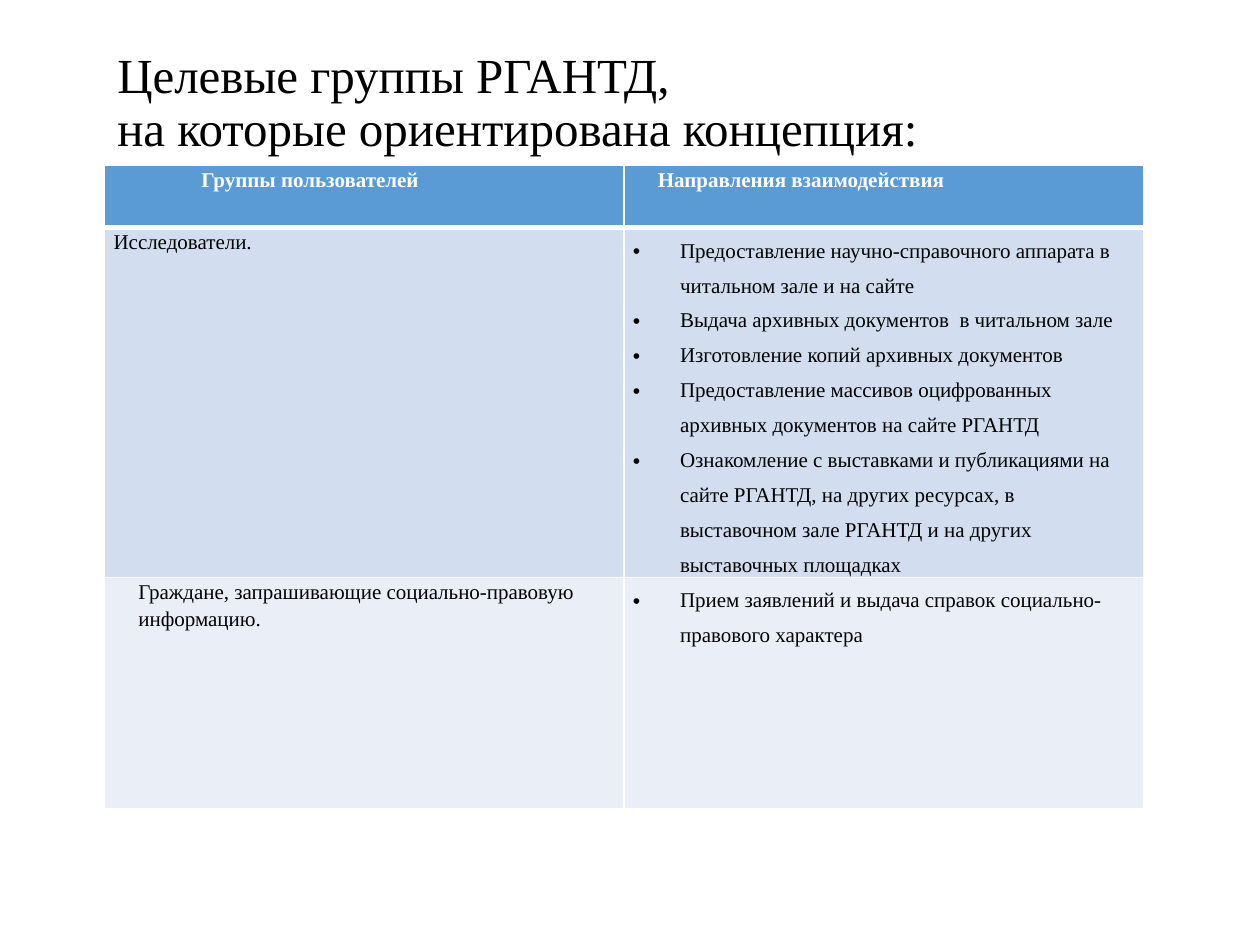
from dataclasses import dataclass

import pptx
import pptx.dml.color
import pptx.enum.text
import pptx.oxml.ns
import pptx.util
from lxml import etree
from pptx.util import Cm, Pt


@dataclass(frozen=True)
class Theme:
    font: str = "Times New Roman"
    title_size: int = 28
    table_size: int = 12
    text: str = "000000"
    header_text: str = "FFFFFF"
    border: str = "FFFFFF"
    header_fill: str = "5B9BD5"
    row_fills: tuple[str, str] = ("D2DEEF", "EAEFF7")


@dataclass(frozen=True)
class CellText:
    paragraphs: tuple[str, ...]
    margin: float = 0  # centimetres
    indent: float = 0  # centimetres
    spacing: float = 1.15
    bullet: str = ""


THEME = Theme()
LEFT, TABLE_TOP = 2.11, 3.33
COLUMN_WIDTH = 10.47
ROW_HEIGHTS = (1.26, 7.04, 4.67)
THIN, THICK = 1, 3


def directions(*items: str) -> CellText:
    return CellText(items, margin=0.95, indent=-0.95, spacing=1.5, bullet="•")


ROWS = (
    (
        CellText(("Группы пользователей",), margin=1.27, indent=0.5),
        CellText(("Направления взаимодействия",), indent=0.5),
    ),
    (
        CellText(("Исследователи.",)),
        directions(
            "Предоставление научно-справочного аппарата в читальном зале и на сайте",
            "Выдача архивных документов  в читальном зале",
            "Изготовление копий архивных документов",
            "Предоставление массивов оцифрованных архивных документов на сайте РГАНТД",
            "Ознакомление с выставками и публикациями на сайте РГАНТД, на других "
            "ресурсах, в выставочном зале РГАНТД и на других выставочных площадках",
        ),
    ),
    (
        CellText(("Граждане, запрашивающие социально-правовую информацию.",), margin=0.5),
        directions("Прием заявлений и выдача справок социально-правового характера"),
    ),
)


def rgb(color: str) -> pptx.dml.color.RGBColor:
    return pptx.dml.color.RGBColor.from_string(color)


def format_font(paragraph, size: int, color: str, bold: bool = False) -> None:
    font = paragraph.font
    font.name, font.size, font.bold = THEME.font, Pt(size), bold
    font.color.rgb = rgb(color)


def add_child(parent, tag: str, **attributes: str):
    return etree.SubElement(parent, pptx.oxml.ns.qn(tag), attributes)


def set_borders(cell, top: int, bottom: int) -> None:
    """Draw the cell's four edges; call before the fill is set."""
    properties = cell._tc.get_or_add_tcPr()
    for side, width in (("L", THIN), ("R", THIN), ("T", top), ("B", bottom)):
        line = add_child(properties, f"a:ln{side}", w=str(Pt(width)))
        add_child(add_child(line, "a:solidFill"), "a:srgbClr", val=THEME.border)


def write_cell(cell, content: CellText, color: str, bold: bool) -> None:
    cell.margin_left = cell.margin_right = Cm(0.18)
    cell.margin_top = cell.margin_bottom = 0
    frame = cell.text_frame
    frame.text = "\n".join(content.paragraphs)
    for paragraph in frame.paragraphs:
        properties = paragraph._p.get_or_add_pPr()
        properties.set("marL", str(Cm(content.margin)))
        properties.set("indent", str(Cm(content.indent)))
        if content.bullet:
            add_child(properties, "a:buFont", typeface="Arial")
            add_child(properties, "a:buChar", char=content.bullet)
        paragraph.line_spacing = content.spacing
        format_font(paragraph, THEME.table_size, color, bold)


def add_title(slide) -> None:
    title = slide.shapes.title
    title.left, title.top, title.width, title.height = Cm(LEFT), Cm(0.91), Cm(21), Cm(2.39)
    frame = title.text_frame
    frame.text = "Целевые группы РГАНТД,\vна которые ориентирована концепция:"
    frame.word_wrap = True
    frame.auto_size = pptx.enum.text.MSO_AUTO_SIZE.NONE
    frame.vertical_anchor = pptx.enum.text.MSO_ANCHOR.MIDDLE
    paragraph = frame.paragraphs[0]
    paragraph.alignment = pptx.enum.text.PP_ALIGN.LEFT
    paragraph.line_spacing = 0.9
    format_font(paragraph, THEME.title_size, THEME.text)


def add_groups_table(slide) -> None:
    column_count = len(ROWS[0])
    table = slide.shapes.add_table(
        len(ROWS), column_count, Cm(LEFT), Cm(TABLE_TOP),
        Cm(COLUMN_WIDTH * column_count), Cm(sum(ROW_HEIGHTS)),
    ).table
    table.horz_banding = False
    for column in table.columns:
        column.width = Cm(COLUMN_WIDTH)
    for row_index, (contents, height) in enumerate(zip(ROWS, ROW_HEIGHTS)):
        table.rows[row_index].height = Cm(height)
        header = row_index == 0
        fill = THEME.header_fill if header else THEME.row_fills[row_index - 1]
        color = THEME.header_text if header else THEME.text
        for column_index, content in enumerate(contents):
            cell = table.cell(row_index, column_index)
            set_borders(
                cell,
                top=THICK if row_index == 1 else THIN,
                bottom=THICK if header else THIN,
            )
            cell.fill.solid()
            cell.fill.fore_color.rgb = rgb(fill)
            write_cell(cell, content, color, header)


def main() -> None:
    presentation = pptx.Presentation()
    presentation.slide_width, presentation.slide_height = Cm(25.4), Cm(19.05)
    # The "Title Only" layout
    slide = presentation.slides.add_slide(presentation.slide_layouts[5])
    add_title(slide)
    add_groups_table(slide)
    presentation.save("out.pptx")


if __name__ == "__main__":
    main()
